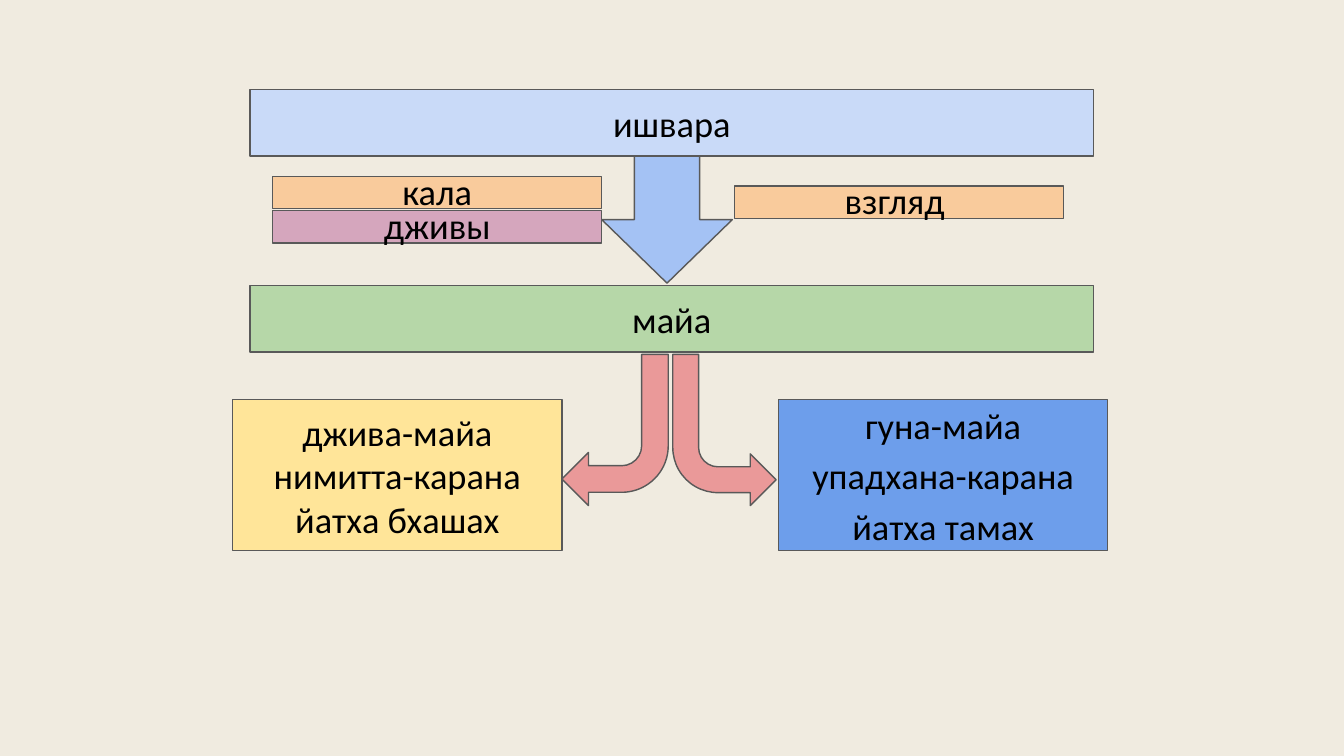
from pptx import Presentation
from pptx.dml.color import RGBColor
from pptx.enum.shapes import MSO_SHAPE as Shape
from pptx.enum.text import MSO_ANCHOR as Anchor, PP_ALIGN as Align
from pptx.util import Cm, Pt


def color(value):
    return RGBColor.from_string(value)


class Diagram:
    """Holds the style and the slide on which boxes and arrows are drawn."""

    font = "Calibri"
    size = Pt(52)
    outline = "595959"
    ink = "000000"

    def __init__(self, slide, background):
        self.slide = slide
        slide.background.fill.solid()
        slide.background.fill.fore_color.rgb = color(background)

    def arrow(self, kind, left, top, width, height, fill, rotation=0, flipped=False):
        shape = self.slide.shapes.add_shape(kind, Cm(left), Cm(top), Cm(width), Cm(height))
        shape.shadow.inherit = False
        shape.fill.solid()
        shape.fill.fore_color.rgb = color(fill)
        shape.line.color.rgb = color(self.outline)
        shape.line.width = Pt(2)
        shape.rotation = rotation
        if flipped:
            shape._element.spPr.xfrm.set("flipV", "1")
        return shape

    def box(self, left, top, width, height, fill, *paragraphs, before=10, bottom=0):
        shape = self.arrow(Shape.RECTANGLE, left, top, width, height, fill)
        frame = shape.text_frame
        frame.word_wrap = True
        frame.vertical_anchor = Anchor.MIDDLE
        frame.margin_left = frame.margin_right = Cm(0.69)
        frame.margin_top, frame.margin_bottom = 0, Cm(bottom)
        for index, lines in enumerate(paragraphs):
            paragraph = frame.add_paragraph() if index else frame.paragraphs[0]
            paragraph.alignment = Align.CENTER
            paragraph.space_before = Pt(before)
            for number, line in enumerate(lines.split("\n")):
                if number:
                    paragraph.add_line_break()
                self.run(paragraph, line)

    def run(self, paragraph, text):
        run = paragraph.add_run()
        run.text = text
        run.font.name = self.font
        run.font.size = self.size
        run.font.color.rgb = color(self.ink)


def main():
    presentation = Presentation()
    presentation.slide_width, presentation.slide_height = Cm(67.74), Cm(38.1)
    slide = presentation.slides.add_slide(presentation.slide_layouts[6])
    diagram = Diagram(slide, "F0EBE0")

    for top, fill, text in ((4.52, "C9DAF8", "ишвара"), (14.4, "B6D7A8", "майа")):
        diagram.box(12.6, top, 42.52, 3.35, fill, text)

    for left, top, fill, text in (
        (13.74, 8.89, "F9CB9C", "кала"),
        (13.74, 10.62, "D5A6BD", "дживы"),
        (37.01, 9.37, "F9CB9C", "взгляд "),
    ):
        diagram.box(left, top, 16.59, 1.63, fill, text, before=0, bottom=0.2)

    diagram.arrow(Shape.DOWN_ARROW, 30.33, 7.87, 6.58, 6.4, "A4C2F4")
    diagram.arrow(Shape.BENT_ARROW, 28.32, 17.86, 5.36, 7.62, "EA9999", rotation=180)
    diagram.arrow(Shape.BENT_ARROW, 33.91, 17.86, 5.21, 7.62, "EA9999", flipped=True)

    for left, fill, paragraphs in (
        (11.73, "FFE599", ["джива-майа\nнимитта-карана\nйатха бхашах"]),
        (39.24, "6D9EEB", ["гуна-майа", "упадхана-карана", "йатха тамах"]),
    ):
        diagram.box(left, 20.14, 16.59, 7.62, fill, *paragraphs)

    presentation.save("out.pptx")


if __name__ == "__main__":
    main()
